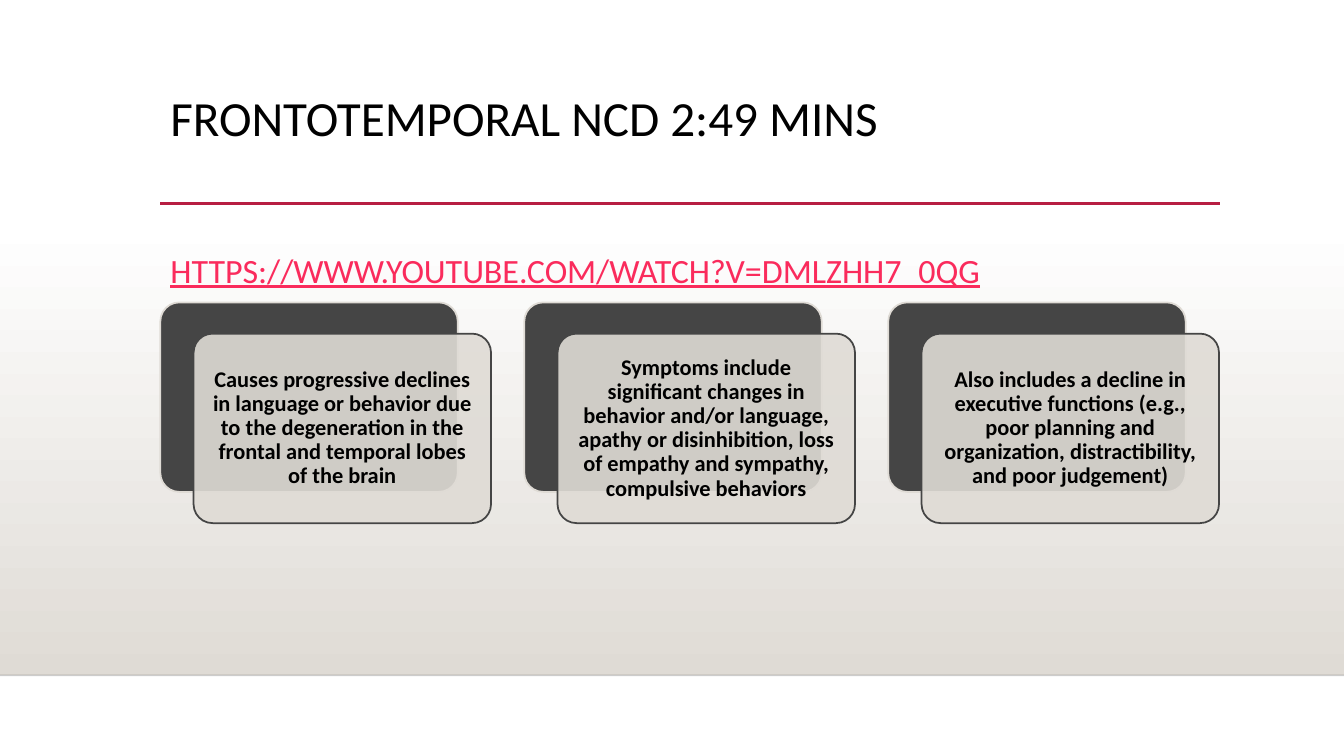
from dataclasses import dataclass

from lxml import etree
from pptx import Presentation
from pptx.dml.color import RGBColor
from pptx.enum import shapes, text
from pptx.oxml import ns
from pptx.util import Inches, Pt


@dataclass(frozen=True)
class Theme:
    font: str = "Calibri"
    ink: RGBColor = RGBColor(0, 0, 0)
    paper: RGBColor = RGBColor(0xFF, 0xFF, 0xFF)
    sand: RGBColor = RGBColor(0xDF, 0xDB, 0xD5)
    charcoal: RGBColor = RGBColor(0x45, 0x45, 0x45)
    crimson: RGBColor = RGBColor(0xB7, 0x1E, 0x42)
    link: RGBColor = RGBColor(0xFA, 0x2B, 0x5C)
    title_size: float = 35.1
    link_size: float = 24.3
    card_size: float = 16


THEME = Theme()
TITLE = "FRONTOTEMPORAL NCD 2:49 MINS"
ADDRESS = "HTTPS://WWW.YOUTUBE.COM/WATCH?V=DMLZHH7_0QG"
CARDS = [
    "Causes progressive declines in language or behavior due to the "
    "degeneration in the frontal and temporal lobes of the brain",
    "Symptoms include significant changes in behavior and/or language, apathy or "
    "disinhibition, loss of empathy and sympathy, compulsive behaviors",
    "Also includes a decline in executive functions (e.g., poor planning and "
    "organization, distractibility, and poor judgement)",
]
LEFT, CARD_TOP, CARD_PITCH = 1.59, 3, 3.61
CARD_WIDTH, CARD_HEIGHT = 2.95, 1.88
OFFSET_X, OFFSET_Y = 0.33, 0.31


def set_alpha(fill_format_owner, percent):
    color = fill_format_owner.find(".//" + ns.qn("a:srgbClr"))
    etree.SubElement(color, ns.qn("a:alpha")).set("val", str(percent * 1000))


def write(box, words, size, color, align, bold=False, underline=False):
    frame = box.text_frame
    frame.word_wrap = True
    frame.auto_size = text.MSO_AUTO_SIZE.NONE
    frame.vertical_anchor = text.MSO_ANCHOR.MIDDLE
    para = frame.paragraphs[0]
    para.text = words
    para.alignment = align
    para.line_spacing = 0.9
    para.space_before = Pt(0)
    font = para.font
    font.name, font.size, font.bold = THEME.font, Pt(size), bold
    font.underline = underline
    font.color.rgb = color
    return para


def fill_placeholder(box, top, height, words, size, color, underline=False):
    box.left, box.top = Inches(LEFT), Inches(top)
    box.width, box.height = Inches(10.5), Inches(height)
    properties = box.text_frame.paragraphs[0]._p.get_or_add_pPr()
    properties.set("marL", "0")
    properties.set("indent", "0")
    etree.SubElement(properties, ns.qn("a:buNone"))
    write(box, words, size, color, text.PP_ALIGN.LEFT, underline=underline)


def add_backdrop(page):
    box = page.shapes.add_shape(
        shapes.MSO_SHAPE.RECTANGLE, 0, Inches(2.21), Inches(13.33), Inches(4.49))
    box.shadow.inherit = False
    box.line.fill.background()
    box.fill.gradient()
    box.fill.gradient_angle = 270
    for stop, color, position in zip(
            box.fill.gradient_stops, (THEME.paper, THEME.sand), (0, 1)):
        stop.color.rgb = color
        stop.position = position


def add_rule(page, start, end, y, color, width):
    rule = page.shapes.add_connector(
        shapes.MSO_CONNECTOR.STRAIGHT, Inches(start), Inches(y), Inches(end), Inches(y))
    rule.line.color.rgb = color
    rule.line.width = Pt(width)
    etree.SubElement(rule._element.spPr, ns.qn("a:effectLst"))
    return rule


def add_panel(page, left, top, fill, outline):
    panel = page.shapes.add_shape(
        shapes.MSO_SHAPE.ROUNDED_RECTANGLE, Inches(left), Inches(top),
        Inches(CARD_WIDTH), Inches(CARD_HEIGHT))
    panel.adjustments[0] = 0.1
    panel.shadow.inherit = False
    panel.fill.solid()
    panel.fill.fore_color.rgb = fill
    panel.line.color.rgb = outline
    panel.line.width = Pt(1.25)
    return panel


def add_card(page, left, words):
    add_panel(page, left, CARD_TOP, THEME.charcoal, THEME.sand)
    front = add_panel(
        page, left + OFFSET_X, CARD_TOP + OFFSET_Y, THEME.sand, THEME.charcoal)
    set_alpha(front._element.spPr.find(ns.qn("a:solidFill")), 90)
    frame = front.text_frame
    frame.margin_left = frame.margin_right = Inches(0.12)
    frame.margin_top = frame.margin_bottom = Inches(0.12)
    write(front, words, THEME.card_size, THEME.ink, text.PP_ALIGN.CENTER, bold=True)


def main():
    deck = Presentation()
    deck.slide_width, deck.slide_height = Inches(13.33), Inches(7.5)
    page = deck.slides.add_slide(deck.slide_layouts[1])
    add_backdrop(page)
    edge = add_rule(page, 0, 13.33, 6.7, THEME.ink, 1)
    set_alpha(edge._element.spPr, 20)
    add_rule(page, LEFT, 12.1, 2.02, THEME.crimson, 2.5)

    title, address = page.shapes.title, page.placeholders[1]
    for box in (title, address):
        page.shapes._spTree.append(box._element)
    fill_placeholder(title, 0.88, 0.64, TITLE, THEME.title_size, THEME.ink)
    fill_placeholder(address, 2.4, 0.6, ADDRESS, THEME.link_size, THEME.link, True)
    for column, words in enumerate(CARDS):
        add_card(page, LEFT + column * CARD_PITCH, words)
    deck.save("out.pptx")


if __name__ == "__main__":
    main()
